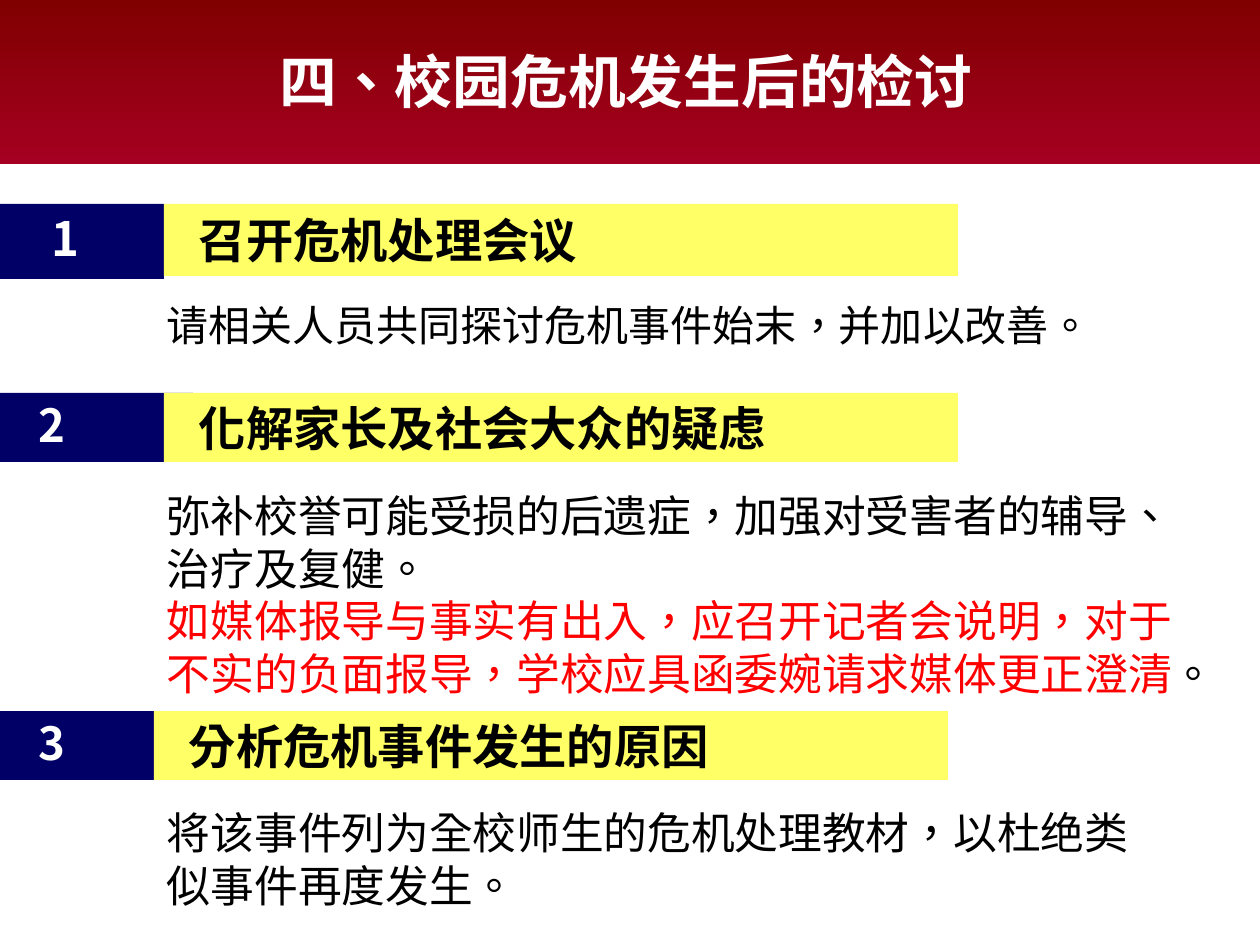
from dataclasses import dataclass

import pptx
import pptx.dml.color
import pptx.enum.lang
import pptx.enum.shapes
import pptx.enum.text
import pptx.util

PX = 914400 / 126
SANS = "Noto Sans CJK SC"
ANCHOR = pptx.enum.text.MSO_ANCHOR
ALIGN = pptx.enum.text.PP_ALIGN


@dataclass(frozen=True)
class Box:
    x: int
    y: int
    w: int
    h: int


@dataclass(frozen=True)
class Run:
    text: str
    size: int
    color: str = "000000"
    font: str = "Arial"
    bold: bool = False


@dataclass(frozen=True)
class Inset:
    left: int = 13
    top: int = 6
    right: int = 0
    bottom: int = 6


@dataclass(frozen=True)
class Section:
    number: str
    heading: str
    number_box: Box
    heading_box: Box
    number_size: int
    number_inset: int
    body_box: Box
    body: tuple[Run, ...]


def px(n: int) -> int:
    return round(n * PX)


def rgb(value: str) -> pptx.dml.color.RGBColor:
    return pptx.dml.color.RGBColor.from_string(value)


def edges(box: Box) -> tuple[int, ...]:
    return tuple(px(n) for n in (box.x, box.y, box.w, box.h))


def add_rect(slide, box: Box, fill: str):
    s = slide.shapes.add_shape(pptx.enum.shapes.MSO_SHAPE.RECTANGLE, *edges(box))
    s.shadow.inherit = False
    s.line.fill.background()
    s.fill.solid()
    s.fill.fore_color.rgb = rgb(fill)
    return s


def write(s, runs: tuple[Run, ...], inset: Inset, anchor=ANCHOR.MIDDLE, align=ALIGN.LEFT) -> None:
    """Fill a shape with one paragraph; a newline in a run is a line break."""
    tf = s.text_frame
    frame = {
        "word_wrap": True,
        "vertical_anchor": anchor,
        "margin_left": px(inset.left),
        "margin_top": px(inset.top),
        "margin_right": px(inset.right),
        "margin_bottom": px(inset.bottom),
    }
    for name, value in frame.items():
        setattr(tf, name, value)
    p = tf.paragraphs[0]
    p.alignment = align
    for run in runs:
        style = {
            "size": pptx.util.Pt(run.size),
            "name": run.font,
            "bold": run.bold,
            "language_id": pptx.enum.lang.MSO_LANGUAGE_ID.TRADITIONAL_CHINESE,
        }
        for i, line in enumerate(run.text.split("\n")):
            if i:
                p.add_line_break()
            if not line:
                continue
            r = p.add_run()
            r.text = line
            for name, value in style.items():
                setattr(r.font, name, value)
            r.font.color.rgb = rgb(run.color)


def add_text(slide, box: Box, runs: tuple[Run, ...], inset: Inset, **layout) -> None:
    write(slide.shapes.add_textbox(*edges(box)), runs, inset, **layout)


def add_banner(slide) -> None:
    s = add_rect(slide, Box(0, 0, 1260, 164), "800000")
    s.fill.gradient()
    s.fill.gradient_angle = 270
    for stop, (position, color) in zip(s.fill.gradient_stops, ((0, "800000"), (1, "A50021"))):
        stop.position = position
        stop.color.rgb = rgb(color)
    title = Run("四、校园危机发生后的检讨", 33, "FFFFFF", bold=True)
    add_text(slide, Box(84, 45, 1071, 100), (title,), Inset(left=26, right=13, bottom=36),
             align=ALIGN.CENTER)


def add_section(slide, sec: Section) -> None:
    number = Run(sec.number, sec.number_size, "FFFFFF", SANS, True)
    write(add_rect(slide, sec.number_box, "000066"), (number,),
          Inset(left=sec.number_inset, top=0, bottom=7))
    heading = Run(sec.heading, 27, font=SANS, bold=True)
    write(add_rect(slide, sec.heading_box, "FFFF66"), (heading,), Inset(left=35))
    add_text(slide, sec.body_box, sec.body, Inset(), anchor=ANCHOR.TOP)


SECTIONS = (
    Section("1", "召开危机处理会议", Box(0, 204, 164, 75), Box(164, 204, 794, 72), 27, 52,
            Box(154, 294, 949, 63),
            (Run("请相关人员共同探讨危机事件始末，并加以改善。", 24),)),
    Section("2", "化解家长及社会大众的疑虑", Box(0, 393, 193, 69), Box(164, 393, 794, 69), 26, 39,
            Box(154, 483, 1075, 301),
            (Run("弥补校誉可能受损的后遗症，加强对受害者的辅导、\n治疗及复健。\n", 25),
             Run("如媒体报导与事实有出入，应召开记者会说明，对于\n"
                 "不实的负面报导，学校应具函委婉请求媒体更正澄清", 25, "FF0000"),
             Run("。", 25))),
    Section("3", "分析危机事件发生的原因", Box(0, 711, 193, 69), Box(154, 711, 794, 69), 26, 39,
            Box(154, 800, 1012, 117),
            (Run("将该事件列为全校师生的危机处理教材，以杜绝类似事件再度发生。", 25),)),
)


def main() -> None:
    prs = pptx.Presentation()
    prs.slide_width, prs.slide_height = px(1260), px(945)
    slide = prs.slides.add_slide(prs.slide_layouts[6])
    add_banner(slide)
    for sec in SECTIONS:
        add_section(slide, sec)
    prs.save("out.pptx")


if __name__ == "__main__":
    main()
